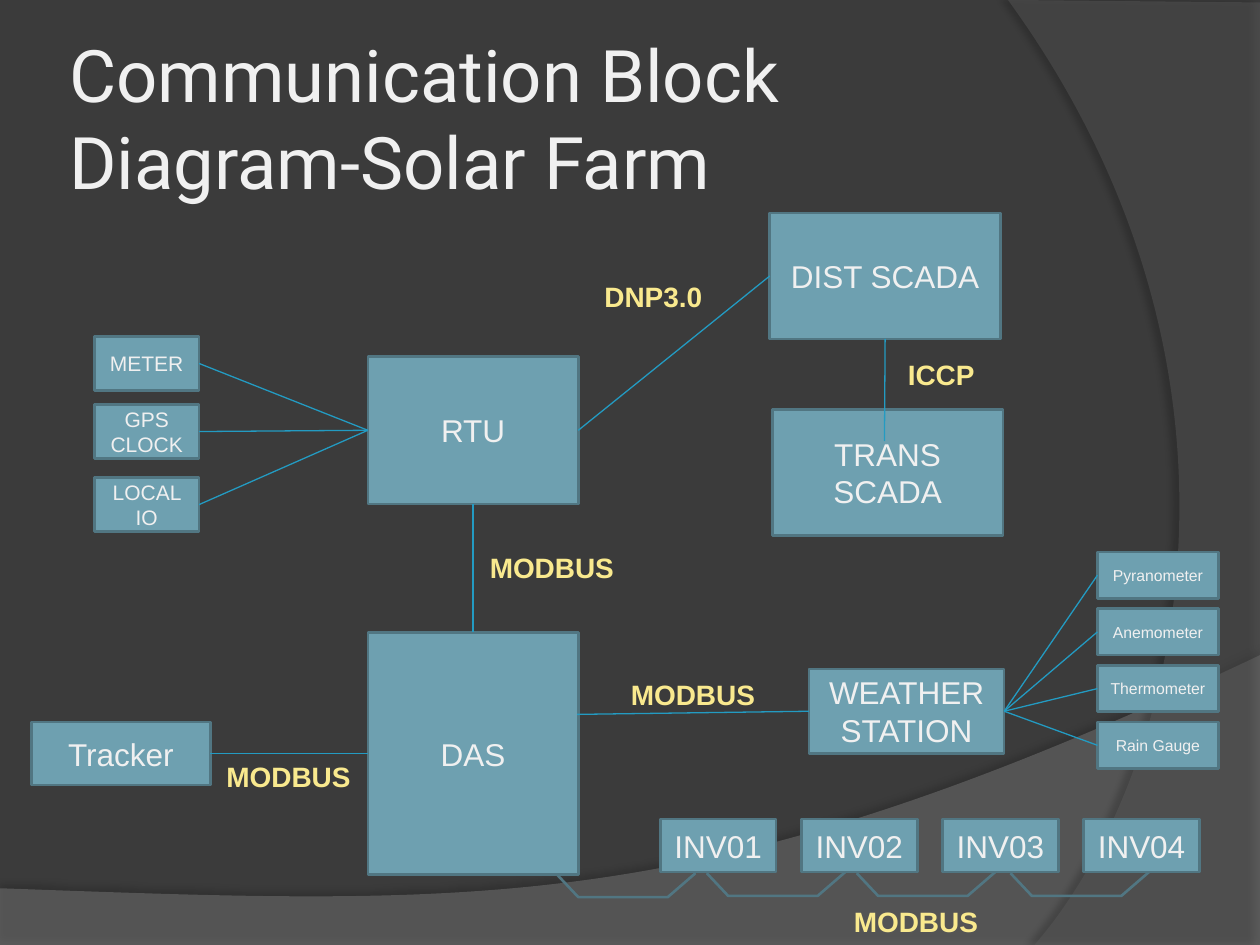
from lxml import etree
from pptx import Presentation
from pptx.dml.color import RGBColor
from pptx.enum.shapes import MSO_CONNECTOR, MSO_SHAPE
from pptx.enum.text import MSO_ANCHOR, MSO_AUTO_SIZE, PP_ALIGN
from pptx.oxml.ns import qn
from pptx.util import Inches, Pt

RECTANGLE = MSO_SHAPE.RECTANGLE
STRAIGHT = MSO_CONNECTOR.STRAIGHT
MIDDLE, CENTER, LEFT_ALIGN = MSO_ANCHOR.MIDDLE, PP_ALIGN.CENTER, PP_ALIGN.LEFT
NO_FIT, GROW = MSO_AUTO_SIZE.NONE, MSO_AUTO_SIZE.SHAPE_TO_FIT_TEXT
TOP, LEFT, BOTTOM, RIGHT = range(4)

BACKGROUND = RGBColor(0x3B, 0x3B, 0x3B)
LOWER_GRAY = RGBColor(0x7F, 0x7F, 0x7F)
SIDE_GRAY = RGBColor(0x5E, 0x5E, 0x5E)
WHITE = RGBColor(0xF0, 0xF0, 0xF0)
TEAL = RGBColor(0x6E, 0xA0, 0xB0)
DARK_TEAL = RGBColor(0x51, 0x76, 0x82)
LINK_BLUE = RGBColor(0x23, 0x9B, 0xC2)
YELLOW = RGBColor(0xF9, 0xE9, 0x8E)
GOLD = RGBColor(0xCC, 0xAF, 0x0A)

TITLE = "Communication Block Diagram-Solar Farm"
SENSORS = ["Pyranometer", "Anemometer", "Thermometer", "Rain Gauge"]
INVERTERS = ["INV01", "INV02", "INV03", "INV04"]
FIELD_DEVICES = {"METER": 2.67, "GPS CLOCK": 3.21, "LOCAL IO": 3.79}

# name: (left, top, width, height, text size)
BLOCKS = {
    "DAS": (2.92, 5.02, 1.67, 1.92, 18),
    "Tracker": (0.25, 5.73, 1.42, 0.5, 18),
    "RTU": (2.92, 2.83, 1.67, 1.17, 18),
    "WEATHER STATION": (6.42, 5.31, 1.55, 0.67, 18),
    "DIST SCADA": (6.11, 1.69, 1.83, 1, 18),
    "TRANS SCADA": (6.13, 3.25, 1.83, 1, 18),
}
BLOCKS.update({name: (0.75, top, 0.83, 0.43, 12) for name, top in FIELD_DEVICES.items()})
BLOCKS.update({name: (8.71, 4.38 + 0.45 * i, 0.96, 0.37, 9) for i, name in enumerate(SENSORS)})
BLOCKS.update({name: (5.24 + 1.12 * i, 6.5, 0.92, 0.42, 18) for i, name in enumerate(INVERTERS)})

# Each end is (block, side) or a free point (x, y)
LINKS = [
    (("Tracker", RIGHT), ("DAS", LEFT)),
    (("RTU", BOTTOM), ("DAS", TOP)),
    (("RTU", RIGHT), ("DIST SCADA", LEFT)),
    (("WEATHER STATION", LEFT), (4.58, 5.67)),
    (("DIST SCADA", BOTTOM), (7.02, 3.5)),
]
LINKS += [((name, RIGHT), ("RTU", LEFT)) for name in FIELD_DEVICES]
LINKS += [((name, LEFT), ("WEATHER STATION", RIGHT)) for name in SENSORS]

PROTOCOLS = [  # text, left, top, width
    ("MODBUS", 6.67, 7.13, 1.2),
    ("MODBUS", 1.69, 5.98, 1.2),
    ("MODBUS", 4.9, 5.33, 1.2),
    ("MODBUS", 3.78, 4.32, 1.2),
    ("DNP3.0", 4.69, 2.17, 0.99),
    ("ICCP", 7.1, 2.79, 0.74),
]
DAISY_CHAIN = [(4.42, 6.93), (5.61, 6.92), (6.8, 6.92), (8.02, 6.92)]
LOOP = [(1.1, 0), (0.88, 0.19), (0.17, 0.19), (0, 0.01)]

# corners, controls of the curve back to the first corner,
# colour, opacity %, shadow opacity %, shadow distance, shadow angle
SWOOSHES = [
    ([(0, 7.05), (0, 7.5), (10, 7.5), (10, 5.2)], [(5.59, 7.29), (3.91, 7.19)],
     LOWER_GRAY, 45, 35, 3.5, 270),
    ([(8, 0), (10, 0.02), (10, 7.5), (8.21, 7.5)], [(9.35, 6.19), (10.18, 3)],
     SIDE_GRAY, 40, 45, 4, 180),
]


def add_outline(page, points, close):
    corners = [(Inches(x), Inches(y)) for x, y in points]
    builder = page.shapes.build_freeform(*corners[0], scale=1.0)
    builder.add_line_segments(corners[1:], close=close)
    shape = builder.convert_to_shape()
    shape.shadow.inherit = False
    return shape


def add_swoosh(page, corners, controls, color, opacity, shade, distance, angle):
    shape = add_outline(page, corners, True)
    shape.fill.solid()
    shape.fill.fore_color.rgb = color
    shape.line.fill.background()
    properties = shape.element.spPr

    curve = etree.Element(qn("a:cubicBezTo"))
    for x, y in controls + corners[:1]:
        etree.SubElement(curve, qn("a:pt"), x=str(Inches(x) - shape.left),
                         y=str(Inches(y) - shape.top))
    next(properties.iter(qn("a:close"))).addprevious(curve)

    fill_color = properties.find(qn("a:solidFill"))[0]
    etree.SubElement(fill_color, qn("a:alpha"), val=str(opacity * 1000))
    shadow = etree.SubElement(
        properties.find(qn("a:effectLst")), qn("a:outerShdw"), blurRad=str(Pt(4)),
        dist=str(Pt(distance)), dir=str(angle * 60000), rotWithShape="0")
    shadow_color = etree.SubElement(shadow, qn("a:srgbClr"), val="000000")
    etree.SubElement(shadow_color, qn("a:alpha"), val=str(shade * 1000))


def write(frame, text, align, color, **font):
    para = frame.paragraphs[0]
    para.alignment = align
    span = para.add_run()
    span.text = text
    span.font.color.rgb = color
    for name, value in font.items():
        setattr(span.font, name, value)
    return span


def add_title(page):
    title = page.shapes.title
    place = {"left": 0.5, "top": 0.3, "width": 8.17, "height": 1.25}
    for name, value in place.items():
        setattr(title, name, Inches(value))
    frame = title.text_frame
    for side in ("left", "top", "right", "bottom"):
        setattr(frame, "margin_" + side, Inches(0.05))
    frame.auto_size, frame.word_wrap, frame.vertical_anchor = NO_FIT, True, MIDDLE
    write(frame, TITLE, LEFT_ALIGN, WHITE, size=Pt(41.4), name="Roboto")
    title.element.getparent().append(title.element)  # in front of the swooshes


def add_block(page, name, left, top, width, height, size):
    box = page.shapes.add_shape(RECTANGLE, *map(Inches, (left, top, width, height)))
    box.shadow.inherit = False
    box.fill.solid()
    box.fill.fore_color.rgb = TEAL
    box.line.color.rgb, box.line.width = DARK_TEAL, Pt(1.5)
    box.text_frame.word_wrap, box.text_frame.vertical_anchor = True, MIDDLE
    write(box.text_frame, name, CENTER, WHITE, size=Pt(size), name="Arial")
    return box


def add_link(page, blocks, start, end):
    points = [(0, 0) if point[0] in blocks else point for point in (start, end)]
    link = page.shapes.add_connector(STRAIGHT, *(Inches(v) for p in points for v in p))
    for point, connect in ((start, link.begin_connect), (end, link.end_connect)):
        if point[0] in blocks:
            connect(blocks[point[0]], point[1])
    link.line.color.rgb, link.line.width = LINK_BLUE, Pt(0.75)
    etree.SubElement(link.element.spPr, qn("a:effectLst"))


def add_protocol(page, text, left, top, width):
    box = page.shapes.add_textbox(*map(Inches, (left, top, width, 0.37)))
    box.text_frame.word_wrap, box.text_frame.auto_size = False, GROW
    span = write(box.text_frame, text, CENTER, YELLOW, size=Pt(16), name="Arial", bold=True)
    edge = etree.Element(qn("a:ln"), w=str(Pt(1.75)))
    edge_fill = etree.SubElement(edge, qn("a:solidFill"))
    etree.SubElement(edge_fill, qn("a:srgbClr"), val=str(GOLD))
    span._r.rPr.insert(0, edge)  # the outline must come before the fill


def main():
    deck = Presentation()
    deck.slide_width, deck.slide_height = Inches(10), Inches(7.5)
    page = deck.slides.add_slide(deck.slide_layouts[5])
    page.background.fill.solid()
    page.background.fill.fore_color.rgb = BACKGROUND

    for swoosh in SWOOSHES:
        add_swoosh(page, *swoosh)
    add_title(page)
    for left, top in DAISY_CHAIN:
        loop = add_outline(page, [(left + x, top + y) for x, y in LOOP], False)
        loop.fill.background()
        loop.line.color.rgb, loop.line.width = DARK_TEAL, Pt(1.5)
    blocks = {name: add_block(page, name, *place) for name, place in BLOCKS.items()}
    for start, end in LINKS:
        add_link(page, blocks, start, end)
    for protocol in PROTOCOLS:
        add_protocol(page, *protocol)
    deck.save("out.pptx")


if __name__ == "__main__":
    main()
